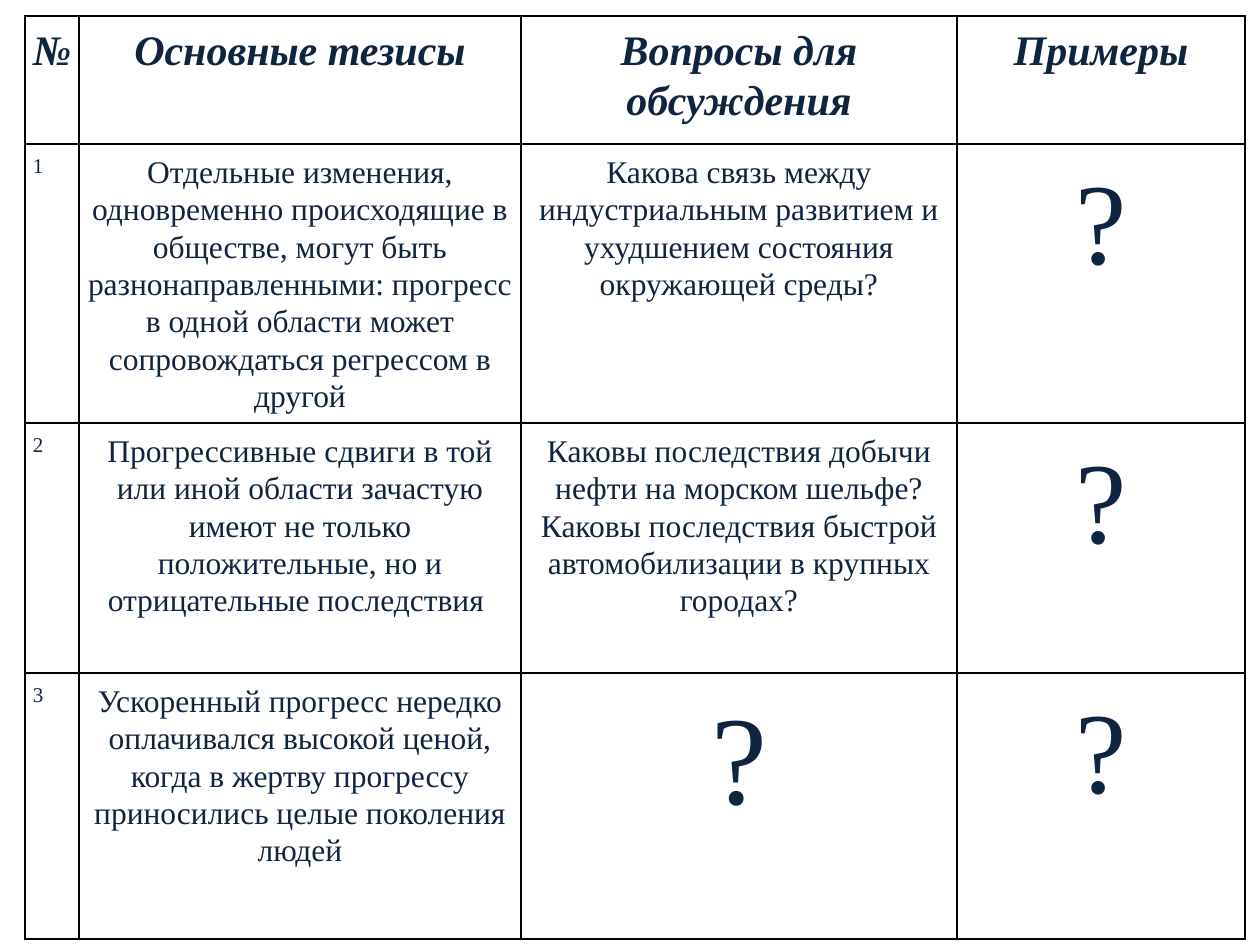
from lxml import etree
from pptx import Presentation
from pptx.dml.color import RGBColor
from pptx.enum.text import PP_ALIGN
from pptx.oxml.ns import qn
from pptx.util import Pt

EMU_PER_PX = 914400 / 126
CENTER, JUSTIFY = PP_ALIGN.CENTER, PP_ALIGN.JUSTIFY
FONT = "Times New Roman"
INK, BORDER, PAPER = "0F243E", "000000", "FFFFFF"

COLUMN_WIDTHS = [54, 442, 436, 288]
ROW_HEIGHTS = [128, 279, 250, 266]
HEADINGS = ["№", "Основные тезисы", "Вопросы для обсуждения", "Примеры"]
THESES = [
    ("Отдельные изменения, одновременно происходящие в обществе, могут быть "
     "разнонаправленными: прогресс в одной области может сопровождаться "
     "регрессом в другой",
     "Какова связь между индустриальным развитием и ухудшением состояния "
     "окружающей среды?"),
    ("Прогрессивные сдвиги в той или иной области зачастую имеют не только "
     "положительные, но и отрицательные последствия ",
     "Каковы последствия добычи нефти на морском шельфе? Каковы последствия "
     "быстрой автомобилизации в крупных городах?"),
    ("Ускоренный прогресс нередко оплачивался высокой ценой, когда в жертву "
     "прогрессу приносились целые поколения людей",
     "?"),
]


def px(length):
    return round(length * EMU_PER_PX)


def color(hex_value):
    return RGBColor.from_string(hex_value)


def add_borders(cell):
    """Draw a 1 pt line on all four sides, ahead of the cell's fill."""
    properties = cell._tc.get_or_add_tcPr()
    for index, side in enumerate(("a:lnL", "a:lnR", "a:lnT", "a:lnB")):
        line = etree.Element(qn(side), w=str(Pt(1)))
        fill = etree.SubElement(line, qn("a:solidFill"))
        etree.SubElement(fill, qn("a:srgbClr"), val=BORDER)
        properties.insert(index, line)


def fill_cell(cell, text, size, align=CENTER, heading=False):
    cell.fill.solid()
    cell.fill.fore_color.rgb = color(PAPER)
    add_borders(cell)
    cell.margin_left = cell.margin_right = px(8)
    cell.margin_top = cell.margin_bottom = px(9)
    paragraph = cell.text_frame.paragraphs[0]
    paragraph.text = text
    paragraph.alignment = align
    paragraph.line_spacing = 1.07
    font = paragraph.runs[0].font
    font.name = FONT
    font.size = Pt(size)
    font.bold = font.italic = heading
    font.color.rgb = color(INK)


def add_theses_table(slide):
    table = slide.shapes.add_table(
        len(ROW_HEIGHTS), len(COLUMN_WIDTHS), px(25), px(16),
        px(sum(COLUMN_WIDTHS)), px(sum(ROW_HEIGHTS))).table
    table.horz_banding = False
    for column, width in zip(table.columns, COLUMN_WIDTHS):
        column.width = px(width)
    for row, height in zip(table.rows, ROW_HEIGHTS):
        row.height = px(height)

    for column, heading in enumerate(HEADINGS):
        fill_cell(table.cell(0, column), heading, 24, heading=True)
    for number, (thesis, question) in enumerate(THESES, start=1):
        fill_cell(table.cell(number, 0), str(number), 12, JUSTIFY)
        fill_cell(table.cell(number, 1), thesis, 18)
        fill_cell(table.cell(number, 2), question, 72 if question == "?" else 18)
        fill_cell(table.cell(number, 3), "?", 66)


def main():
    presentation = Presentation()
    presentation.slide_width = px(1260)
    presentation.slide_height = px(945)
    blank_layout = presentation.slide_layouts[6]
    add_theses_table(presentation.slides.add_slide(blank_layout))
    presentation.save("out.pptx")


if __name__ == "__main__":
    main()
